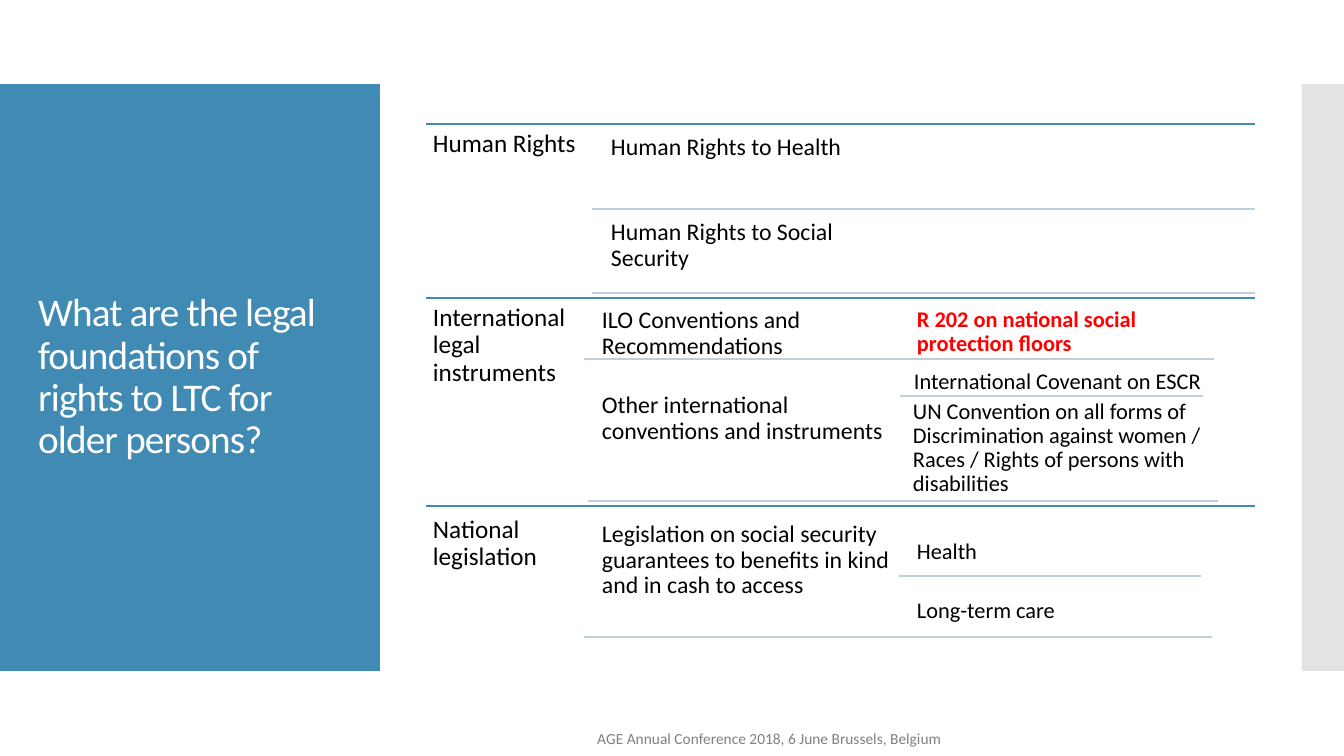
"""Build the slide on the legal foundations of rights to long-term care."""
from lxml.etree import SubElement
from pptx import Presentation
from pptx.dml.color import RGBColor
from pptx.enum.shapes import MSO_CONNECTOR, MSO_SHAPE
from pptx.enum.text import MSO_ANCHOR, MSO_AUTO_SIZE, PP_ALIGN
from pptx.oxml.ns import qn
from pptx.util import Emu, Pt

BLUE = RGBColor(0x41, 0x8A, 0xB3)
PALE_BLUE = RGBColor(0xC0, 0xCF, 0xDD)
LIGHT_GRAY = RGBColor(0xC8, 0xC8, 0xC8)
GRAY = RGBColor(0x80, 0x80, 0x80)
WHITE = RGBColor(0xFF, 0xFF, 0xFF)
BLACK = RGBColor(0x00, 0x00, 0x00)
RED = RGBColor(0xFF, 0x00, 0x00)
FONT = "Calibri"
PIXELS_PER_INCH = 100.8


def px(*lengths):
    """Turn pixel lengths into EMU."""
    return [Emu(round(length * 914400 / PIXELS_PER_INCH)) for length in lengths]


def write(shape, text, size, color, bold=False, spacing=0.9):
    """Fill a text shape with one formatted run."""
    frame = shape.text_frame
    frame.word_wrap = True
    frame.auto_size = MSO_AUTO_SIZE.NONE
    paragraph = frame.paragraphs[0]
    paragraph.line_spacing = spacing
    run = paragraph.add_run()
    run.text = text
    run.font.name = FONT
    run.font.size = Pt(size)
    run.font.bold = bold
    run.font.color.rgb = color
    return paragraph, run


presentation = Presentation()
presentation.slide_width, presentation.slide_height = px(1344, 756)
slide = presentation.slides.add_slide(presentation.slide_layouts[5])

for left, width, color, opacity in [(0, 380, BLUE, 100), (1302, 42, LIGHT_GRAY, 50)]:
    panel = slide.shapes.add_shape(MSO_SHAPE.RECTANGLE, *px(left, 84, width, 587))
    panel.shadow.inherit = False
    panel.fill.solid()
    panel.fill.fore_color.rgb = color
    panel.line.fill.background()
    if opacity < 100:
        fill_color = panel.fill._xPr.find(qn("a:solidFill"))[0]
        SubElement(fill_color, qn("a:alpha"), val=str(opacity * 1000))

title = slide.shapes.title
title.left, title.top, title.width, title.height = px(28, 124, 325, 507)
paragraph, run = write(
    title, "What are the legal foundations of rights to LTC for older persons?", 28, WHITE)
paragraph.alignment = PP_ALIGN.LEFT
run.font._element.set("spc", "-60")
title.text_frame.vertical_anchor = MSO_ANCHOR.MIDDLE
slide.shapes._spTree.append(title._element)

rules = [(426, 1255, y, BLUE) for y in (124, 298, 506)] + [
    (592, 1255, 209, PALE_BLUE),
    (592, 1255, 293, PALE_BLUE),
    (584, 1214, 359, PALE_BLUE),
    (900, 1203, 396, PALE_BLUE),
    (588, 1218, 501, PALE_BLUE),
    (899, 1201, 576, PALE_BLUE),
    (584, 1212, 637, PALE_BLUE),
]
for start, end, y, color in rules:
    rule = slide.shapes.add_connector(MSO_CONNECTOR.STRAIGHT, *px(start, y, end, y))
    rule.line.color.rgb = color
    rule.line.width = Pt(0.85)
    SubElement(rule._element.spPr, qn("a:effectLst"))

entries = [
    (426, 124, 165, 173, "Human Rights", 18),
    (604, 128, 318, 81, "Human Rights to Health", 17),
    (604, 213, 318, 81, "Human Rights to Social Security", 17),
    (426, 298, 157, 173, "International legal instruments", 18),
    (595, 301, 304, 81, "ILO Conventions and Recommendations", 17),
    (910, 301, 304, 81, "R 202 on national social protection floors", 16),
    (595, 386, 304, 81, "Other international conventions and instruments", 17),
    (907, 363, 336, 33, "International Covenant on ESCR", 16),
    (906, 393, 345, 108, "UN Convention on all forms of Discrimination against women / "
     "Races / Rights of persons with disabilities", 16),
    (426, 510, 157, 135, "National legislation", 18),
    (595, 515, 304, 121, "Legislation on social security guarantees to benefits in kind "
     "and in cash to access", 17),
    (910, 533, 344, 43, "Health", 16),
    (910, 592, 318, 45, "Long-term care", 16),
]
for left, top, width, height, text, size in entries:
    entry = slide.shapes.add_textbox(*px(left, top, width, height))
    frame = entry.text_frame
    frame.margin_left, frame.margin_top, frame.margin_right, frame.margin_bottom = px(7, 7, 7, 7)
    highlighted = text.startswith("R 202")
    write(entry, text, size, RED if highlighted else BLACK, bold=highlighted)

footer = slide.shapes.add_textbox(*px(444, 718, 651, 40))
paragraph, run = write(
    footer, "AGE Annual Conference 2018, 6 June Brussels, Belgium", 11, GRAY, spacing=1.0)
paragraph.alignment = PP_ALIGN.CENTER
footer.text_frame.vertical_anchor = MSO_ANCHOR.MIDDLE

presentation.save("out.pptx")
